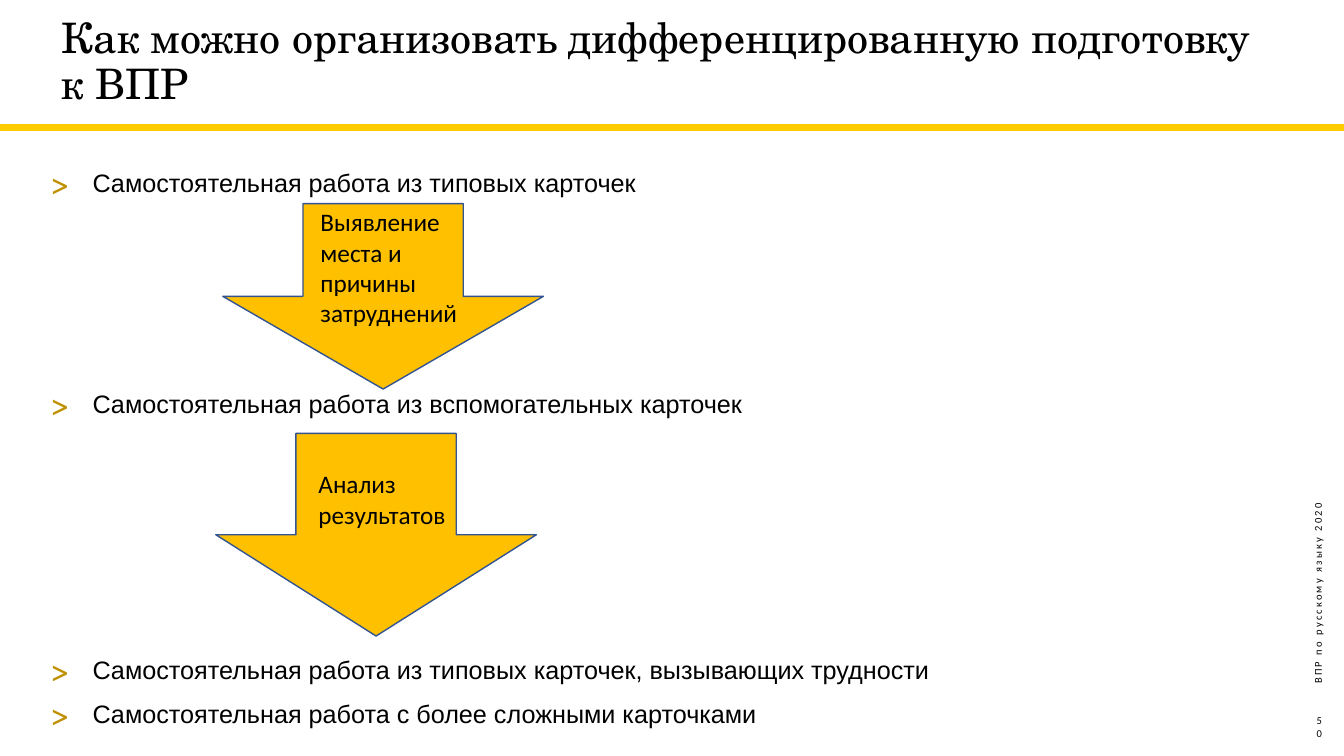
import pptx
import pptx.util
import pptx.dml.color
import pptx.enum.shapes
import pptx.enum.text
import pptx.oxml
import pptx.oxml.ns
from pptx.util import Inches

COLORS = {"text": "000000", "rule": "FFCC00", "bullet": "BF9000",
          "arrow": "FFC000", "outline": "325491"}
MIDDLE = pptx.enum.text.MSO_ANCHOR.MIDDLE
TOP = pptx.enum.text.MSO_ANCHOR.TOP


def rgb(name):
    return pptx.dml.color.RGBColor.from_string(COLORS[name])


def add_text(s, box, lines, size, font, anchor=TOP):
    sp = s.shapes.add_textbox(*map(Inches, box))
    tf = sp.text_frame
    tf.word_wrap = True
    tf.vertical_anchor = anchor
    for i, line in enumerate(lines):
        p = tf.paragraphs[0] if i == 0 else tf.add_paragraph()
        r = p.add_run()
        r.text = line
        r.font.size = pptx.util.Pt(size)
        r.font.name = font
        r.font.color.rgb = rgb("text")
    return sp


prs = pptx.Presentation()
prs.slide_width, prs.slide_height = Inches(13.33), Inches(7.5)
s = prs.slides.add_slide(prs.slide_layouts[6])

# Rule under the title
rule = s.shapes.add_connector(pptx.enum.shapes.MSO_CONNECTOR.STRAIGHT,
                              Inches(0), Inches(1.27), Inches(13.33), Inches(1.27))
rule.line.color.rgb = rgb("rule")
rule.line.width = pptx.util.Pt(5)
rule._element.spPr.append(pptx.oxml.parse_xml(
    f'<a:effectLst {pptx.oxml.ns.nsdecls("a")}/>'))

# Title
title = add_text(s, (0.51, 0, 12.3, 1.25),
                 ["Как можно организовать дифференцированную подготовку к ВПР"],
                 30, "TeX Gyre Schola", MIDDLE)
title.text_frame.paragraphs[0].line_spacing = 0.9

# Work stages, with room between them for the arrows
stages = [("Самостоятельная работа из типовых карточек", 0),
          ("Самостоятельная работа из вспомогательных карточек", 136),
          ("Самостоятельная работа из типовых карточек, вызывающих трудности", 168.5),
          ("Самостоятельная работа с более сложными карточками", 10)]
body = add_text(s, (0.41, 1.61, 9.61, 5.7), [text for text, gap in stages], 18, "Arial")
for p, (text, gap) in zip(body.text_frame.paragraphs, stages):
    pPr = p._p.get_or_add_pPr()
    pPr.set("marL", str(Inches(0.41)))
    pPr.set("indent", str(Inches(-0.41)))
    for xml in (f'<a:buClr %s><a:srgbClr val="{COLORS["bullet"]}"/></a:buClr>',
                '<a:buSzPct %s val="120000"/>',
                '<a:buFont %s typeface="TeX Gyre Schola"/>',
                '<a:buChar %s char="&gt;"/>'):
        pPr.append(pptx.oxml.parse_xml(xml % pptx.oxml.ns.nsdecls("a")))
    if gap:
        p.space_before = pptx.util.Pt(gap)

# Arrows between stages and their captions
arrows = [((2.21, 2.02, 3.18, 1.84), (3.08, 2, 1.81, 1.31),
           "Выявление места и причины затруднений"),
          ((2.14, 4.3, 3.18, 2.01), (3.06, 4.6, 1.48, 0.71),
           "Анализ результатов")]
for arrow_box, caption_box, caption in arrows:
    sp = s.shapes.add_shape(pptx.enum.shapes.MSO_SHAPE.DOWN_ARROW,
                            *map(Inches, arrow_box))
    sp.shadow.inherit = False
    sp.fill.solid()
    sp.fill.fore_color.rgb = rgb("arrow")
    sp.line.color.rgb = rgb("outline")
    sp.line.width = pptx.util.Pt(1)
    add_text(s, caption_box, [caption], 18, "Calibri")

# Vertical footer and page number
footer = add_text(s, (11.14, 4.87, 3.86, 0.16), ["ВПР по русскому языку 2020"],
                  7.5, "Calibri", MIDDLE)
footer.rotation = 270
footer.text_frame.paragraphs[0].runs[0].font._element.set("spc", "150")
number = add_text(s, (12.96, 7.01, 0.23, 0.4), ["50"], 7.5, "Calibri", MIDDLE)
number.text_frame.paragraphs[0].alignment = pptx.enum.text.PP_ALIGN.CENTER

prs.save("out.pptx")
